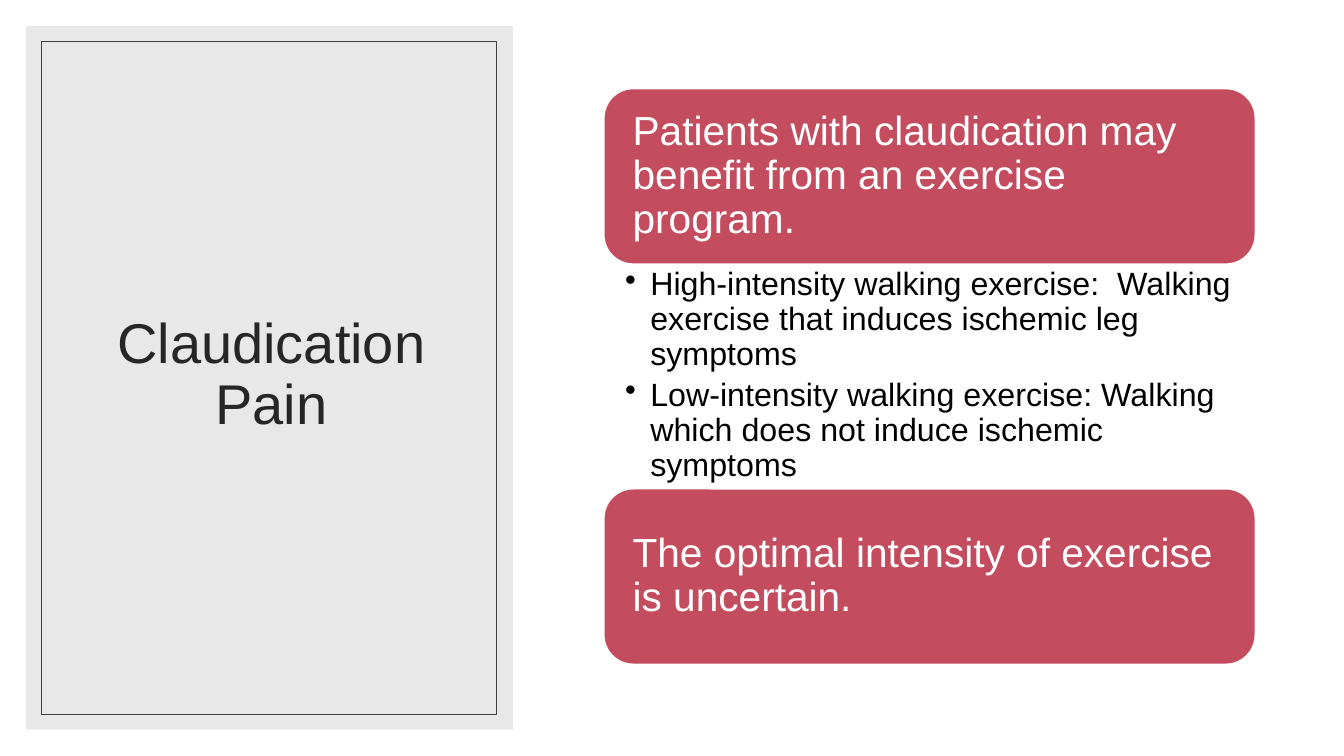
from lxml.etree import SubElement
from pptx import Presentation
from pptx.dml.color import RGBColor
from pptx.enum.shapes import MSO_SHAPE as Shape
from pptx.enum.text import MSO_ANCHOR as Anchor, MSO_AUTO_SIZE as AutoSize, PP_ALIGN as Align
from pptx.oxml.ns import qn
from pptx.util import Inches, Pt

WHITE = RGBColor(0xFF, 0xFF, 0xFF)
BLACK = RGBColor(0x00, 0x00, 0x00)
PANEL_GREY = RGBColor(0xD9, 0xD9, 0xD9)
FRAME_GREY = RGBColor(0x40, 0x40, 0x40)
TITLE_GREY = RGBColor(0x26, 0x26, 0x26)
ROSE = RGBColor(0xC3, 0x4D, 0x5E)
FONT = "Arial"

BANNER_HEIGHT = 1.74
BULLETS_HEIGHT = 2.23
TITLE = "Claudication Pain"
BENEFIT = "Patients with claudication may benefit from an exercise program."
INTENSITIES = [
    "High-intensity walking exercise:  Walking exercise that induces ischemic leg symptoms",
    "Low-intensity walking exercise: Walking which does not induce ischemic symptoms",
]
UNCERTAIN = "The optimal intensity of exercise is uncertain."


def add_span(para, text, size, color):
    """Add one formatted run to a paragraph with tight line spacing."""
    para.line_spacing = 0.9
    span = para.add_run()
    span.text = text
    span.font.name = FONT
    span.font.size = Pt(size)
    span.font.color.rgb = color


def set_insets(frame, left, top, right, bottom):
    """Wrap the text and set the four insets in inches."""
    frame.word_wrap = True
    frame.margin_left, frame.margin_top = Inches(left), Inches(top)
    frame.margin_right, frame.margin_bottom = Inches(right), Inches(bottom)


def add_box(page, preset, left, top, width, height):
    """Add a preset shape without a shadow."""
    box = page.shapes.add_shape(preset, Inches(left), Inches(top), Inches(width), Inches(height))
    box.shadow.inherit = False
    return box


def add_title_panel(page, left, top, width, height):
    """Draw the framed panel and set the slide title in front of it."""
    panel = add_box(page, Shape.RECTANGLE, left, top, width, height)
    panel.fill.solid()
    panel.fill.fore_color.rgb = PANEL_GREY
    panel.line.fill.background()
    color = panel.element.spPr.find(qn("a:solidFill"))[0]
    SubElement(color, qn("a:alpha")).set("val", "60000")

    gap = 0.15
    frame = add_box(page, Shape.RECTANGLE, left + gap, top + gap, width - 2 * gap - 0.02, height - 2 * gap)
    frame.fill.background()
    frame.line.color.rgb = FRAME_GREY
    frame.line.width = Pt(0.5)

    title = page.shapes.title
    title.left, title.top = Inches(left + 0.37), Inches(top + 0.35)
    title.width, title.height = Inches(width - 0.71), Inches(height - 0.74)
    text = title.text_frame
    text.word_wrap = True
    text.auto_size = AutoSize.NONE
    text.vertical_anchor = Anchor.MIDDLE
    para = text.paragraphs[0]
    para.alignment = Align.CENTER
    add_span(para, TITLE, 40, TITLE_GREY)
    title.element.getparent().append(title.element)


def add_banner(page, text, left, top, width, height):
    """Draw a rounded banner with its statement."""
    banner = add_box(page, Shape.ROUNDED_RECTANGLE, left, top, width, height)
    banner.fill.solid()
    banner.fill.fore_color.rgb = ROSE
    banner.line.color.rgb = WHITE
    banner.line.width = Pt(1)
    set_insets(banner.text_frame, 0.2, 0.2, 0.2, 0.2)
    banner.text_frame.vertical_anchor = Anchor.MIDDLE
    para = banner.text_frame.paragraphs[0]
    para.alignment = Align.LEFT
    add_span(para, text, 29, WHITE)


def add_bullets(page, items, left, top, width, height):
    """Write the bulleted list between the banners."""
    box = page.shapes.add_textbox(Inches(left), Inches(top), Inches(width), Inches(height))
    frame = box.text_frame
    set_insets(frame, 0.21, 0.04, 0.23, 0.04)
    for index, item in enumerate(items):
        para = frame.add_paragraph() if index else frame.paragraphs[0]
        add_span(para, item, 23, BLACK)
        para.level = 1
        para.space_after = Pt(4.6)
        props = para._p.get_or_add_pPr()
        props.set("marL", str(Inches(0.25)))
        props.set("indent", str(Inches(-0.25)))
        SubElement(props, qn("a:buChar")).set("char", "•")


def add_exercise_list(page, left, top, width):
    """Stack the first banner, its bullets and the second banner."""
    bullets_top = top + BANNER_HEIGHT
    add_banner(page, BENEFIT, left, top, width, BANNER_HEIGHT)
    add_bullets(page, INTENSITIES, left, bullets_top, width, BULLETS_HEIGHT)
    add_banner(page, UNCERTAIN, left, bullets_top + BULLETS_HEIGHT, width, BANNER_HEIGHT)


def main():
    """Build the slide and save the deck."""
    deck = Presentation()
    deck.slide_width, deck.slide_height = Inches(13.33), Inches(7.5)
    page = deck.slides.add_slide(deck.slide_layouts[5])
    add_title_panel(page, 0.26, 0.26, 4.83, 6.98)
    add_exercise_list(page, 5.99, 0.88, 6.46)
    deck.save("out.pptx")


if __name__ == "__main__":
    main()
